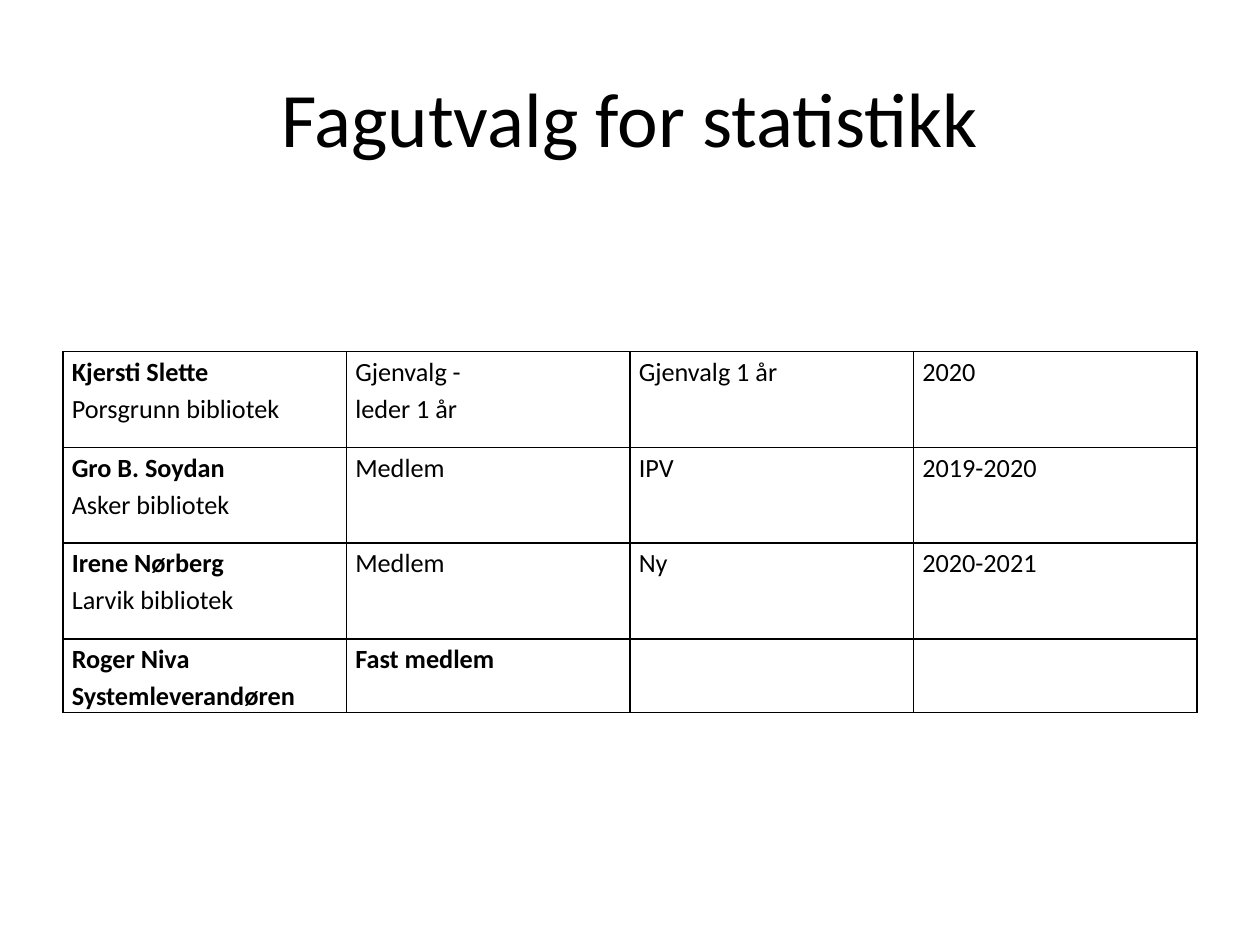
from lxml import etree
from pptx import Presentation
from pptx.dml.color import RGBColor
from pptx.enum import text
from pptx.oxml import ns
from pptx.util import Inches, Pt


def style(p, size, bold=False, color="000000"):
    p.font.name = "Calibri"
    p.font.size = Pt(size)
    p.font.bold = bold
    p.font.color.rgb = RGBColor.from_string(color)


def add_borders(cell, color="000000", width=Pt(1)):
    tcPr = cell._tc.get_or_add_tcPr()
    for i, side in enumerate(("lnL", "lnR", "lnT", "lnB")):
        ln = etree.Element(ns.qn(f"a:{side}"), w=str(width))
        fill = etree.SubElement(ln, ns.qn("a:solidFill"))
        etree.SubElement(fill, ns.qn("a:srgbClr"), val=color)
        tcPr.insert(i, ln)


prs = Presentation()
prs.slide_width, prs.slide_height = Inches(10), Inches(7.5)
s = prs.slides.add_slide(prs.slide_layouts[5])

title = s.shapes.title
title.left, title.top = Inches(0.5), Inches(0.3)
title.width, title.height = Inches(9), Inches(1.25)
tf = title.text_frame
tf.text = "Fagutvalg for statistikk"
tf.vertical_anchor = text.MSO_ANCHOR.MIDDLE
p = tf.paragraphs[0]
p.alignment = text.PP_ALIGN.CENTER
style(p, 44)

# Each cell is a list of (line, bold) pairs
members = [
    [[("Kjersti Slette", True), ("Porsgrunn bibliotek", False)],
     [("Gjenvalg -", False), ("leder 1 år", False)],
     [("Gjenvalg 1 år", False)], [("2020", False)]],
    [[("Gro B. Soydan", True), ("Asker bibliotek", False)],
     [("Medlem", False)], [("IPV", False)], [("2019-2020", False)]],
    [[("Irene Nørberg", True), ("Larvik bibliotek", False)],
     [("Medlem", False)], [("Ny", False)], [("2020-2021", False)]],
    [[("Roger Niva", True), ("Systemleverandøren", True)],
     [("Fast medlem", True)], [], []],
]
row_heights = [0.76, 0.76, 0.76, 0.57]

table = s.shapes.add_table(4, 4, Inches(0.5), Inches(2.79),
                           Inches(9), Inches(sum(row_heights))).table
table.first_row = table.horz_banding = False
for row, height, member in zip(table.rows, row_heights, members):
    row.height = Inches(height)
    for cell, lines in zip(row.cells, member):
        cell.fill.background()
        add_borders(cell)
        cell.margin_left = cell.margin_right = Inches(0.07)
        cell.margin_top = cell.margin_bottom = 0
        tf = cell.text_frame
        tf.text = "\n".join(line for line, bold in lines)
        for p, (line, bold) in zip(tf.paragraphs, lines):
            p.line_spacing = 1.15
            style(p, 15, bold)

prs.save("out.pptx")
